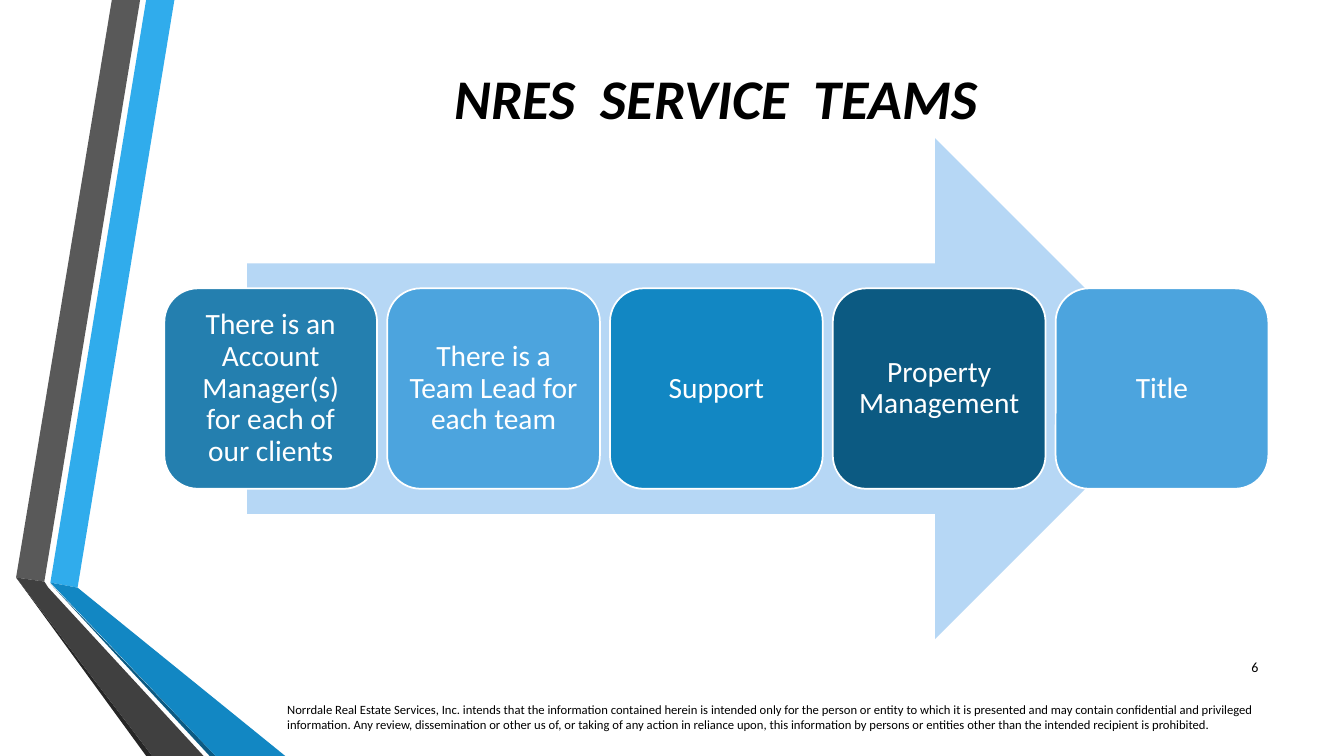
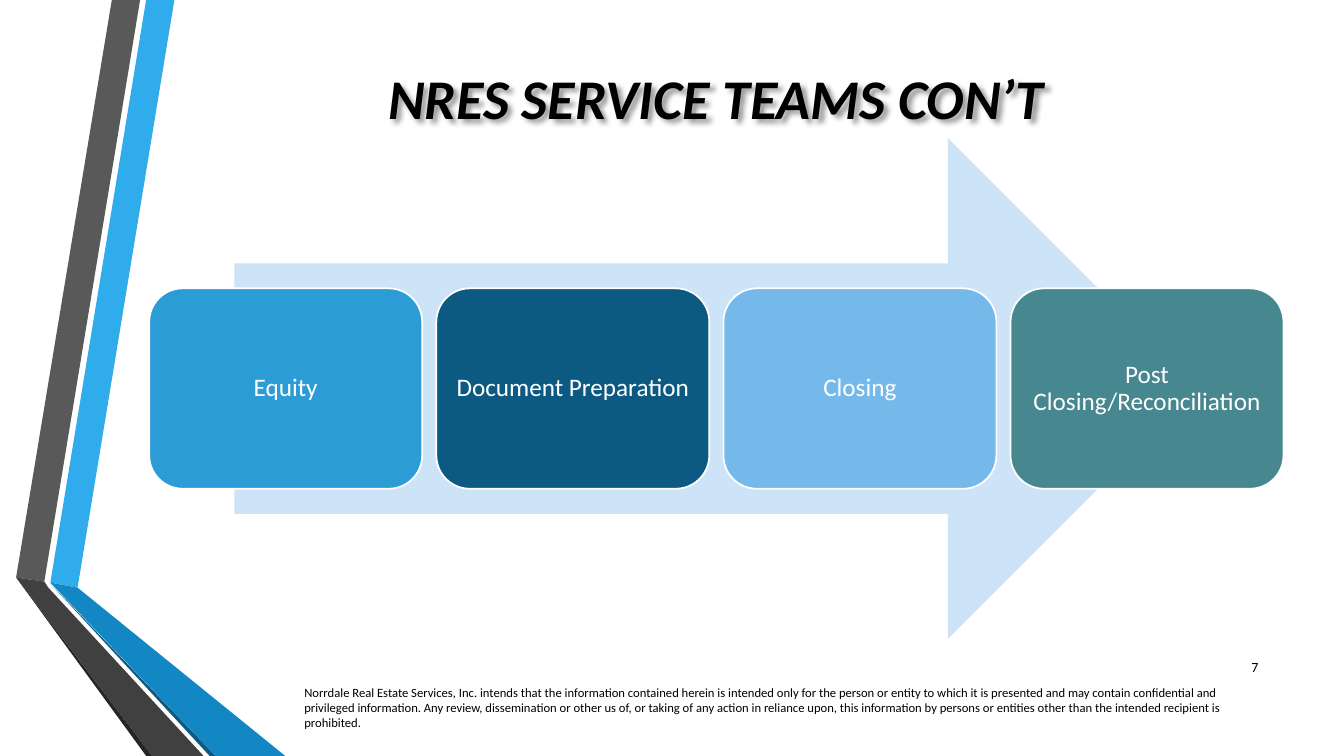
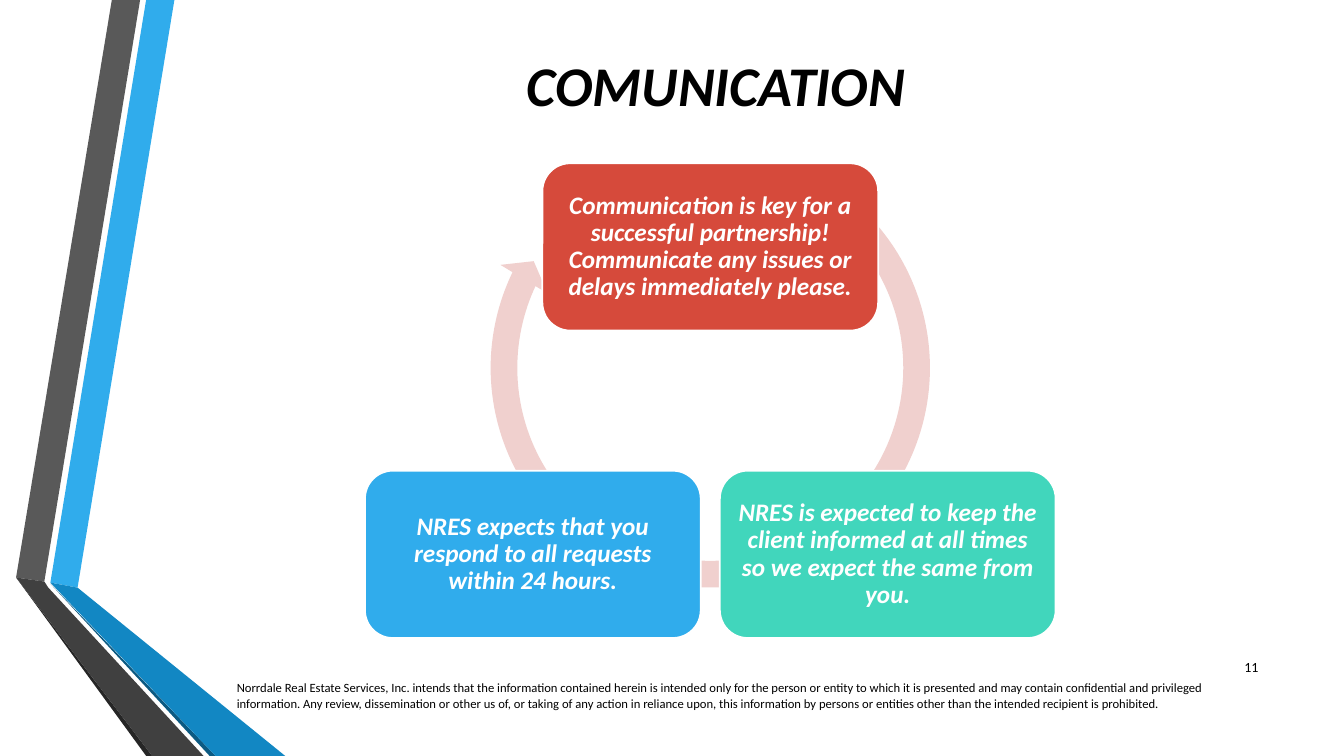
from lxml.etree import SubElement
from pptx import Presentation
from pptx.dml.color import RGBColor
from pptx.enum.shapes import MSO_SHAPE
from pptx.enum.text import MSO_ANCHOR, PP_ALIGN
from pptx.oxml.ns import qn
from pptx.util import Emu, Pt

PX = 9144  # 100 px to the inch
FONT = "Calibri"

BLACK = RGBColor(0x00, 0x00, 0x00)
WHITE = RGBColor(0xFF, 0xFF, 0xFF)
SKY = RGBColor(0x30, 0xAC, 0xEC)
BLUE = RGBColor(0x12, 0x87, 0xC3)
NAVY = RGBColor(0x0C, 0x5A, 0x82)
STEEL = RGBColor(0x24, 0x7F, 0xAF)
AZURE = RGBColor(0x4C, 0xA4, 0xDE)
CERULEAN = RGBColor(0x2C, 0x9C, 0xD6)
LIGHT_BLUE = RGBColor(0x74, 0xB9, 0xEA)
TEAL = RGBColor(0x46, 0x87, 0x90)
MINT = RGBColor(0x41, 0xD6, 0xBC)
RED = RGBColor(0xD6, 0x4A, 0x3B)
ARROW_BLUE = RGBColor(0xB6, 0xD7, 0xF5)
ARROW_PALE = RGBColor(0xCD, 0xE3, 0xF8)
RING_PINK = RGBColor(0xF0, 0xD0, 0xCE)
GRAY = RGBColor(0x59, 0x59, 0x59)
DARK_GRAY = RGBColor(0x40, 0x40, 0x40)
CHARCOAL = RGBColor(0x26, 0x26, 0x26)

BANDS = [
    (SKY, [(50, 578), (77, 583), (173, 0), (145, 0)]),
    (GRAY, [(139, 0), (111, 0), (16, 573), (44, 577)]),
    (CHARCOAL, [(16, 573), (145, 750), (151, 750)]),
    (NAVY, [(50, 579), (208, 750), (214, 750)]),
    (BLUE, [(50, 578), (214, 750), (283, 750), (77, 583)]),
    (DARK_GRAY, [(202, 750), (48, 583), (44, 577), (16, 573), (151, 750)]),
]

DISCLAIMER = (
    "Norrdale Real Estate Services, Inc. intends that the information contained "
    "herein is intended only for the person or entity to which it is presented and "
    "may contain confidential and privileged information. Any review, dissemination "
    "or other us of, or taking of any action in reliance upon, this information by "
    "persons or entities other than the intended recipient is prohibited."
)


def px(*lengths):
    return [Emu(round(v * PX)) for v in lengths]


def paint(sp, fill, line=None):
    sp.shadow.inherit = False
    sp.fill.solid()
    sp.fill.fore_color.rgb = fill
    if line is None:
        sp.line.fill.background()
    else:
        sp.line.color.rgb = line
        sp.line.width = Pt(1.25)


def write(sp, text, size, color, align, bold_italic=False):
    tf = sp.text_frame
    tf.word_wrap = True
    tf.vertical_anchor = MSO_ANCHOR.MIDDLE
    p = tf.paragraphs[0]
    p.text = text
    p.alignment = align
    p.font.name = FONT
    p.font.size = Pt(size)
    p.font.color.rgb = color
    p.font.bold = p.font.italic = bold_italic
    return p


def add_text(s, box, text, size, align=PP_ALIGN.LEFT, bold_italic=False):
    sp = s.shapes.add_textbox(*px(*box))
    write(sp, text, size, BLACK, align, bold_italic)
    return sp


def add_card(s, box, text, fill, size, inset, bold_italic=False):
    sp = s.shapes.add_shape(MSO_SHAPE.ROUNDED_RECTANGLE, *px(*box))
    paint(sp, fill, WHITE)
    tf = sp.text_frame
    tf.margin_left = tf.margin_top = tf.margin_right = tf.margin_bottom = px(inset)[0]
    write(sp, text, size, WHITE, PP_ALIGN.CENTER, bold_italic).line_spacing = 0.9


def add_bands(s):
    for fill, points in BANDS:
        outline = s.shapes.build_freeform(*points[0], scale=PX)
        outline.add_line_segments(points[1:], close=True)
        paint(outline.convert_to_shape(), fill)


def add_soft_shadow(sp):
    effects = SubElement(sp._element.spPr, qn("a:effectLst"))
    shadow = SubElement(effects, qn("a:outerShdw"), blurRad="50800", dist="38100",
                        dir="2700000", algn="tl", rotWithShape="0")
    color = SubElement(shadow, qn("a:srgbClr"), val=str(BLACK))
    SubElement(color, qn("a:alpha"), val="40000")


def add_frame(prs, title, number, footer_box, title_box=(162, 0, 1096, 192)):
    """Add a slide with the bands, title, disclaimer and page number."""
    s = prs.slides.add_slide(prs.slide_layouts[6])
    add_bands(s)
    heading = add_text(s, title_box, title, 40, PP_ALIGN.CENTER, True)
    add_text(s, footer_box, DISCLAIMER, 9)
    add_text(s, (1198, 642, 60, 40), number, 10, PP_ALIGN.RIGHT)
    return s, heading


def add_process(s, box, arrow_fill, cards, gap, size, inset):
    """Place a row of cards over a wide arrow."""
    x, y, w, h = box
    arrow = s.shapes.add_shape(MSO_SHAPE.RIGHT_ARROW,
                               *px(x + 0.075 * w, y, 0.85 * w, h))
    paint(arrow, arrow_fill)
    card_w = (w - gap * (len(cards) - 1)) / len(cards)
    for i, (text, fill) in enumerate(cards):
        card_box = (x + i * (card_w + gap), y + 0.3 * h, card_w, 0.4 * h)
        add_card(s, card_box, text, fill, size, inset)


def add_cycle(s, box, cards):
    """Place three cards (top, right, left) around a circular arrow."""
    x, y, w, h = box
    card_w, card_h, ring = 333, 166, 464
    sp = s.shapes.add_shape(MSO_SHAPE.CIRCULAR_ARROW,
                            *px(x + (w - ring) / 2, y - 29, ring, ring))
    for i, value in enumerate((0.057, 3.405, 123.284, 183.369, 0.059)):
        sp.adjustments[i] = value
    paint(sp, RING_PINK)
    right, bottom = w - card_w, h - card_h
    corners = [(right / 2, 0), (right, bottom), (0, bottom)]
    for (dx, dy), (text, fill) in zip(corners, cards):
        add_card(s, (x + dx, y + dy, card_w, card_h), text, fill, 18, 7, True)


def main():
    prs = Presentation()
    prs.slide_width, prs.slide_height = px(1333, 750)

    s, _ = add_frame(prs, "NRES  SERVICE  TEAMS", "6", (275, 691, 983, 40))
    add_process(s, (163, 137, 1095, 497), ARROW_BLUE, [
        ("There is an Account Manager(s) for each of our clients", STEEL),
        ("There is a Team Lead for each team", AZURE),
        ("Support", BLUE),
        ("Property Management", NAVY),
        ("Title", AZURE),
    ], gap=10, size=21, inset=9)

    s, heading = add_frame(prs, "NRES SERVICE TEAMS CON’T", "7", (292, 682, 966, 40))
    add_soft_shadow(heading)
    add_process(s, (148, 137, 1125, 497), ARROW_PALE, [
        ("Equity", CERULEAN),
        ("Document Preparation", NAVY),
        ("Closing", LIGHT_BLUE),
        ("Post Closing/Reconciliation", TEAL),
    ], gap=14, size=18, inset=7)

    s, _ = add_frame(prs, "COMUNICATION", "11", (225, 670, 1022, 40),
                     title_box=(162, 35, 1096, 96))
    add_cycle(s, (362, 162, 685, 471), [
        ("Communication is key for a successful partnership! "
         "Communicate any issues or delays immediately please.", RED),
        ("NRES is expected to keep the client informed at all times "
         "so we expect the same from you.", MINT),
        ("NRES expects that you respond to all requests within 24 hours.", SKY),
    ])

    prs.save("out.pptx")


if __name__ == "__main__":
    main()
